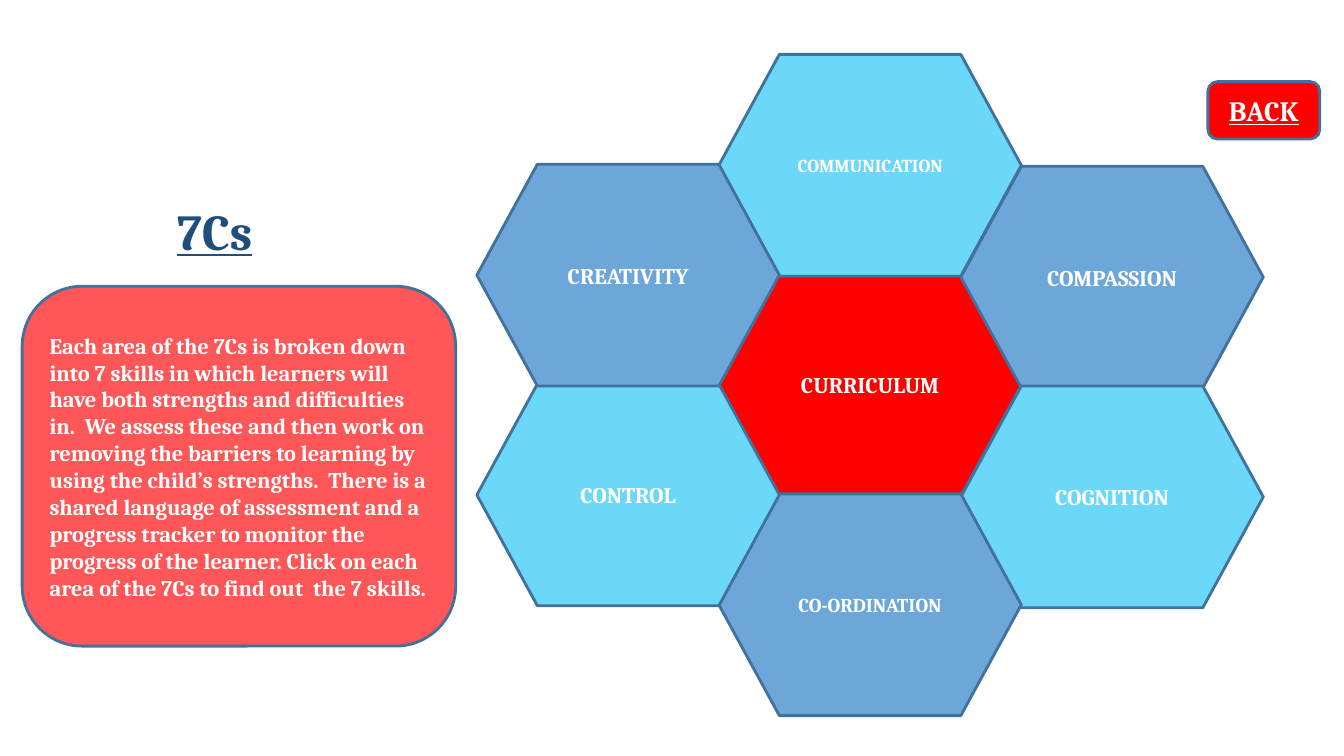
from pptx import Presentation
from pptx.dml.color import RGBColor
from pptx.enum.shapes import MSO_SHAPE
from pptx.enum.text import MSO_ANCHOR, PP_ALIGN
from pptx.oxml.ns import qn
from pptx.util import Inches, Pt
from lxml import etree

FONT = "Cambria"
WHITE, RED, NAVY, OUTLINE = "FFFFFF", "FF0000", "1E4E79", "42719B"
SKY, STEEL = "6BD7F9", "6DA6D9"

TITLE = "7Cs"
INTRO = (
    "Each area of the 7Cs is broken down into 7 skills in which learners will "
    "have both strengths and difficulties in.  We assess these and then work on "
    "removing the barriers to learning by using the child’s strengths.  There is "
    "a shared language of assessment and a progress tracker to monitor the "
    "progress of the learner. Click on each area of the 7Cs to find out  the 7 skills."
)
BACK = "BACK"

# (label, column, row, fill, text size)
SKILLS = [
    ("CURRICULUM", 1, 1, RED, 16),
    ("COMMUNICATION", 1, 0, SKY, 13),
    ("COMPASSION", 2, 0, STEEL, 16),
    ("COGNITION", 2, 1, SKY, 16),
    ("CO-ORDINATION", 1, 2, STEEL, 14),
    ("CONTROL", 0, 1, SKY, 16),
    ("CREATIVITY", 0, 0, STEEL, 16),
]
HEX_W, HEX_H = 3, 2.2
HEX_LEFT, COLUMN_STEP, ROW_STEP = 4.73, 2.4, 2.18
COLUMN_TOPS = (1.63, 0.54, 1.65)


def rgb(value):
    return RGBColor.from_string(value)


def write(s, text, size, color=WHITE, align=PP_ALIGN.CENTER, underline=None):
    tf = s.text_frame
    tf.text = text
    tf.word_wrap = True
    tf.vertical_anchor = MSO_ANCHOR.MIDDLE
    p = tf.paragraphs[0]
    p.alignment = align
    font = p.runs[0].font
    font.name, font.size, font.bold = FONT, Pt(size), True
    font.underline = underline
    font.color.rgb = rgb(color)
    return p


def add_panel(slide, kind, box, fill):
    s = slide.shapes.add_shape(kind, *map(Inches, box))
    s.shadow.inherit = False
    s.fill.solid()
    s.fill.fore_color.rgb = rgb(fill)
    s.line.color.rgb = rgb(OUTLINE)
    s.line.width = Pt(2)
    return s


def set_opacity(s, percent):
    color = s._element.spPr.find(qn("a:solidFill"))[0]
    etree.SubElement(color, qn("a:alpha")).set("val", str(percent * 1000))


def main():
    prs = Presentation()
    prs.slide_width, prs.slide_height = Inches(13.33), Inches(7.5)
    slide = prs.slides.add_slide(prs.slide_layouts[6])

    title = slide.shapes.add_textbox(*map(Inches, (1.66, 1.89, 1.97, 0.86)))
    p = write(title, TITLE, 36, NAVY, PP_ALIGN.LEFT, True)
    p.line_spacing = 0.9

    intro = add_panel(slide, MSO_SHAPE.ROUNDED_RECTANGLE, (0.22, 2.84, 4.3, 3.57), RED)
    set_opacity(intro, 66)
    write(intro, INTRO, 16, align=PP_ALIGN.LEFT)

    for label, column, row, fill, size in SKILLS:
        left = HEX_LEFT + column * COLUMN_STEP
        top = COLUMN_TOPS[column] + row * ROW_STEP
        s = add_panel(slide, MSO_SHAPE.FLOWCHART_PREPARATION, (left, top, HEX_W, HEX_H), fill)
        write(s, label, size)

    back = add_panel(slide, MSO_SHAPE.ROUNDED_RECTANGLE, (11.98, 0.81, 1.11, 0.57), RED)
    write(back, BACK, 20, underline=True)

    prs.save("out.pptx")


if __name__ == "__main__":
    main()
